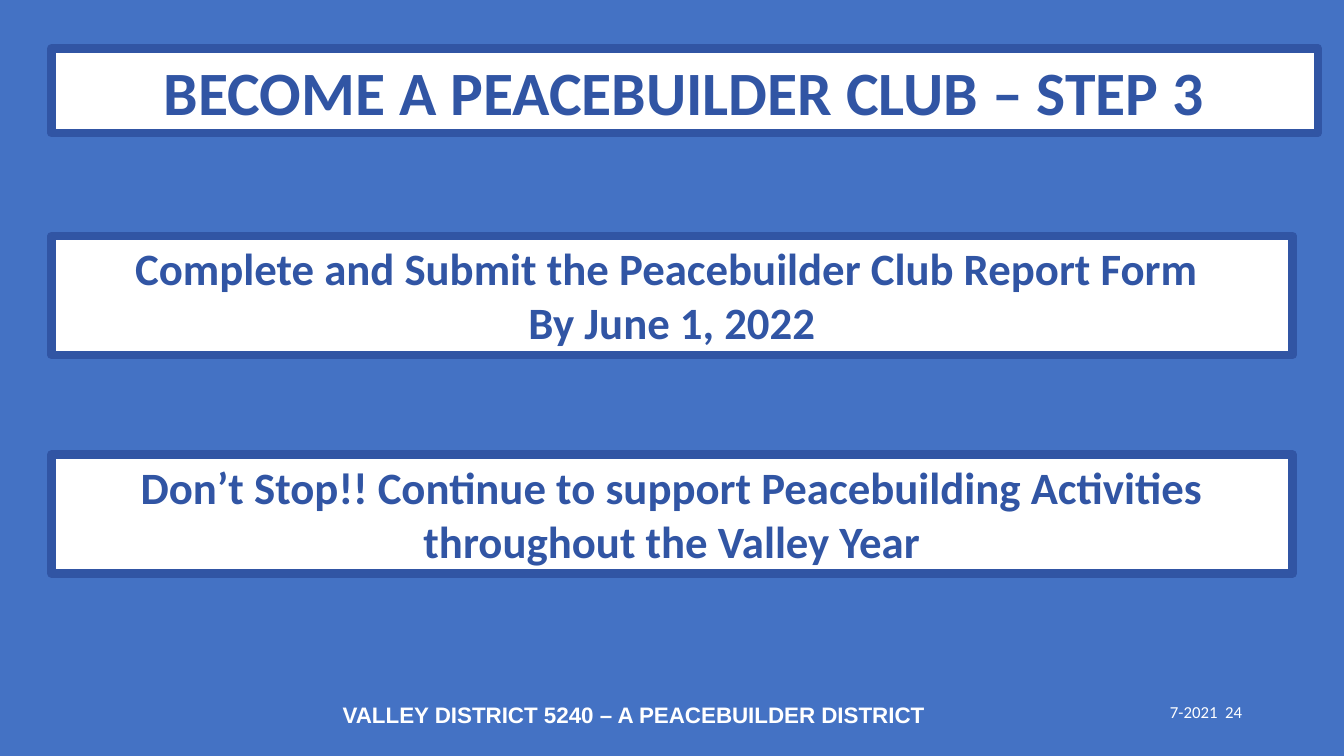
from pptx import Presentation
from pptx.dml.color import RGBColor
from pptx.enum.shapes import MSO_SHAPE
from pptx.enum.text import MSO_ANCHOR, PP_ALIGN
from pptx.util import Inches, Pt

BLUE = RGBColor(0x44, 0x72, 0xC4)
DARK_BLUE = RGBColor(0x31, 0x55, 0xA4)
WHITE = RGBColor(0xFF, 0xFF, 0xFF)


class SlideBuilder:
    """Holds the current slide and the style shared by its elements."""

    panel_left = 0.51
    border = Pt(6)
    heading = {"name": "Calibri", "size": Pt(44), "bold": True}
    message = {"name": "Calibri", "size": Pt(32), "bold": True}
    footer = {"name": "Arial", "size": Pt(16), "bold": True}
    page = {"name": "Calibri", "size": Pt(12), "bold": False}

    def __init__(self, prs):
        self.slide = prs.slides.add_slide(prs.slide_layouts[5])
        background = self.slide.background.fill
        background.solid()
        background.fore_color.rgb = BLUE

    def set_text(self, shape, lines, font, color, align, anchor=MSO_ANCHOR.TOP):
        frame = shape.text_frame
        frame.text = "\n".join(lines)
        frame.word_wrap = True
        frame.vertical_anchor = anchor
        for paragraph in frame.paragraphs:
            paragraph.alignment = align
            paragraph.font.color.rgb = color
            for attribute, value in font.items():
                setattr(paragraph.font, attribute, value)

    def frame_panel(self, panel, lines, font):
        panel.fill.solid()
        panel.fill.fore_color.rgb = WHITE
        panel.line.color.rgb = DARK_BLUE
        panel.line.width = self.border
        self.set_text(panel, lines, font, DARK_BLUE, PP_ALIGN.CENTER)

    def title(self, text, top, width, height):
        title = self.slide.shapes.title
        title.left, title.top = Inches(self.panel_left), Inches(top)
        title.width, title.height = Inches(width), Inches(height)
        self.frame_panel(title, [text], self.heading)

    def panel(self, lines, top, width, height):
        panel = self.slide.shapes.add_shape(
            MSO_SHAPE.RECTANGLE, Inches(self.panel_left), Inches(top),
            Inches(width), Inches(height))
        panel.shadow.inherit = False
        self.frame_panel(panel, lines, self.message)

    def label(self, text, box, font, align, anchor):
        label = self.slide.shapes.add_textbox(*map(Inches, box))
        self.set_text(label, [text], font, WHITE, align, anchor)


def main():
    prs = Presentation()
    prs.slide_width, prs.slide_height = Inches(13.33), Inches(7.5)
    builder = SlideBuilder(prs)

    # Heading
    builder.title("BECOME A PEACEBUILDER CLUB – STEP 3", 0.48, 12.56, 0.84)

    # Step messages
    messages = [
        ["Complete and Submit the Peacebuilder Club Report Form ",
         "By June 1, 2022"],
        ["Don’t Stop!! Continue to support Peacebuilding Activities "
         "throughout the Valley Year"],
    ]
    for index, lines in enumerate(messages):
        builder.panel(lines, 2.34 + 2.17 * index, 12.31, 1.18)

    # Footer
    builder.label("VALLEY DISTRICT 5240 – A PEACEBUILDER DISTRICT",
                  (3.3, 6.91, 6.12, 0.37), builder.footer,
                  PP_ALIGN.LEFT, MSO_ANCHOR.TOP)
    builder.label("7-2021  24", (9.42, 6.86, 3, 0.4), builder.page,
                  PP_ALIGN.RIGHT, MSO_ANCHOR.MIDDLE)

    prs.save("out.pptx")


if __name__ == "__main__":
    main()
